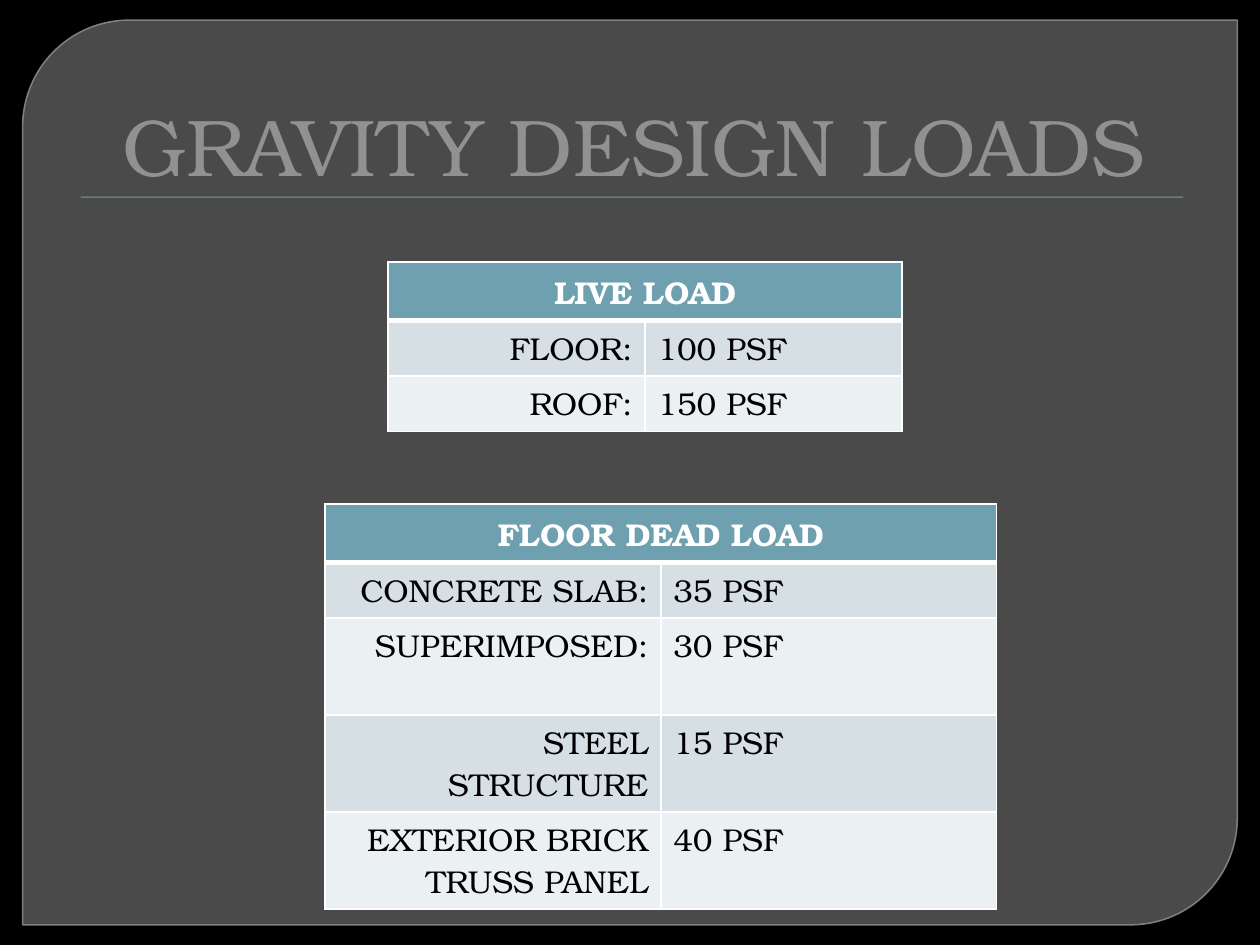
import pptx
import pptx.util
import pptx.dml.color
import pptx.enum.shapes
import pptx.enum.text
import pptx.oxml
import pptx.oxml.ns

Inches = pptx.util.Inches
Pt = pptx.util.Pt
Align = pptx.enum.text.PP_ALIGN
Shape = pptx.enum.shapes.MSO_SHAPE


def color(text):
    return pptx.dml.color.RGBColor.from_string(text)


def node(tag, **attrs):
    item = pptx.oxml.parse_xml(f"<{tag} {pptx.oxml.ns.nsdecls('a')}/>")
    for name, value in attrs.items():
        item.set(name, str(value))
    return item


def fade(fill, percent):
    """Make a solid fill partly transparent."""
    tint = fill._xPr.find(".//" + pptx.oxml.ns.qn("a:srgbClr"))
    tint.append(node("a:alpha", val=percent * 1000))


class Deck:
    font = "TeX Gyre Bonum"
    accent = "6EA0B0"
    bands = ("D5DFE4", "EBF0F2")

    def __init__(self):
        self.file = pptx.Presentation()
        self.file.slide_width = Inches(10)
        self.file.slide_height = Inches(7.5)
        self.slide = self.file.slides.add_slide(self.file.slide_layouts[5])
        back = self.slide.background.fill
        back.solid()
        back.fore_color.rgb = color("000000")

    def text(self, para, text, size, tint, bold=False):
        run = para.add_run()
        run.text = text
        run.font.name = self.font
        run.font.size = Pt(size)
        run.font.bold = bold
        run.font.color.rgb = color(tint)

    def shape(self, kind, left, top, width, height, tint):
        item = self.slide.shapes.add_shape(
            kind, Inches(left), Inches(top), Inches(width), Inches(height))
        item.shadow.inherit = False
        item.fill.solid()
        item.fill.fore_color.rgb = color(tint)
        item.line.fill.background()
        return item

    def panel(self):
        item = self.shape(Shape.ROUND_2_DIAG_RECTANGLE,
                          0.18, 0.16, 9.64, 7.18, "737373")
        item.adjustments[0] = 0.118
        fade(item.fill, 65)
        item.line.color.rgb = color("8B8B8B")
        item.line.width = Pt(0.87)
        fade(item.line.fill, 88)

    def title(self, text):
        item = self.slide.shapes.title
        item.left, item.top = Inches(0.5), Inches(0.28)
        item.width, item.height = Inches(9), Inches(1.25)
        frame = item.text_frame
        frame.auto_size = pptx.enum.text.MSO_AUTO_SIZE.NONE
        frame.vertical_anchor = pptx.enum.text.MSO_ANCHOR.BOTTOM
        frame.margin_bottom = 0
        para = frame.paragraphs[0]
        para.alignment = Align.CENTER
        para._p.get_or_add_pPr().set("marL", str(Inches(0.06)))
        self.text(para, text, 46, "CDC9C4")

    def edge(self, cell, side, width):
        line = node(f"a:ln{side}", w=Pt(width))
        fill = node("a:solidFill")
        fill.append(node("a:srgbClr", val="FFFFFF"))
        line.append(fill)
        cell._tc.get_or_add_tcPr().append(line)

    def cell(self, cell, text, align, row):
        head = row == 0
        for side in "LRTB":
            thick = (head and side == "B") or (row == 1 and side == "T")
            self.edge(cell, side, 3 if thick else 1)
        cell.fill.solid()
        cell.fill.fore_color.rgb = color(
            self.accent if head else self.bands[(row - 1) % 2])
        para = cell.text_frame.paragraphs[0]
        para.alignment = align
        if text:
            self.text(para, text, 18, "FFFFFF" if head else "000000", head)

    def table(self, left, top, width, head, rows, heights):
        heights = [0.46] + heights
        table = self.slide.shapes.add_table(
            len(heights), 2, Inches(left), Inches(top),
            Inches(width), Inches(sum(heights))).table
        for row, height in zip(table.rows, heights):
            row.height = Inches(height)
        table.cell(0, 0).merge(table.cell(0, 1))
        self.cell(table.cell(0, 0), head, Align.CENTER, 0)
        self.cell(table.cell(0, 1), "", Align.CENTER, 0)
        for i, (label, load) in enumerate(rows, 1):
            self.cell(table.cell(i, 0), label, Align.RIGHT, i)
            self.cell(table.cell(i, 1), load, Align.LEFT, i)


def main():
    deck = Deck()

    # Frame, title and rule
    deck.panel()
    deck.shape(Shape.RECTANGLE, 0.64, 1.56, 8.75, 0.01, deck.accent)
    deck.title("GRAVITY DESIGN LOADS")

    # Load tables
    low, high = 0.44, 0.77
    deck.table(3.08, 2.08, 4.08, "LIVE LOAD",
               [("FLOOR:", "100 PSF"), ("ROOF:", "150 PSF")], [low, low])
    deck.table(2.58, 4, 5.33, "FLOOR DEAD LOAD",
               [("CONCRETE SLAB:", "35 PSF"),
                ("SUPERIMPOSED:", "30 PSF"),
                ("STEEL STRUCTURE", "15 PSF"),
                ("EXTERIOR BRICK TRUSS PANEL", "40 PSF")],
               [low, high, high, high])

    deck.file.save("out.pptx")


if __name__ == "__main__":
    main()
